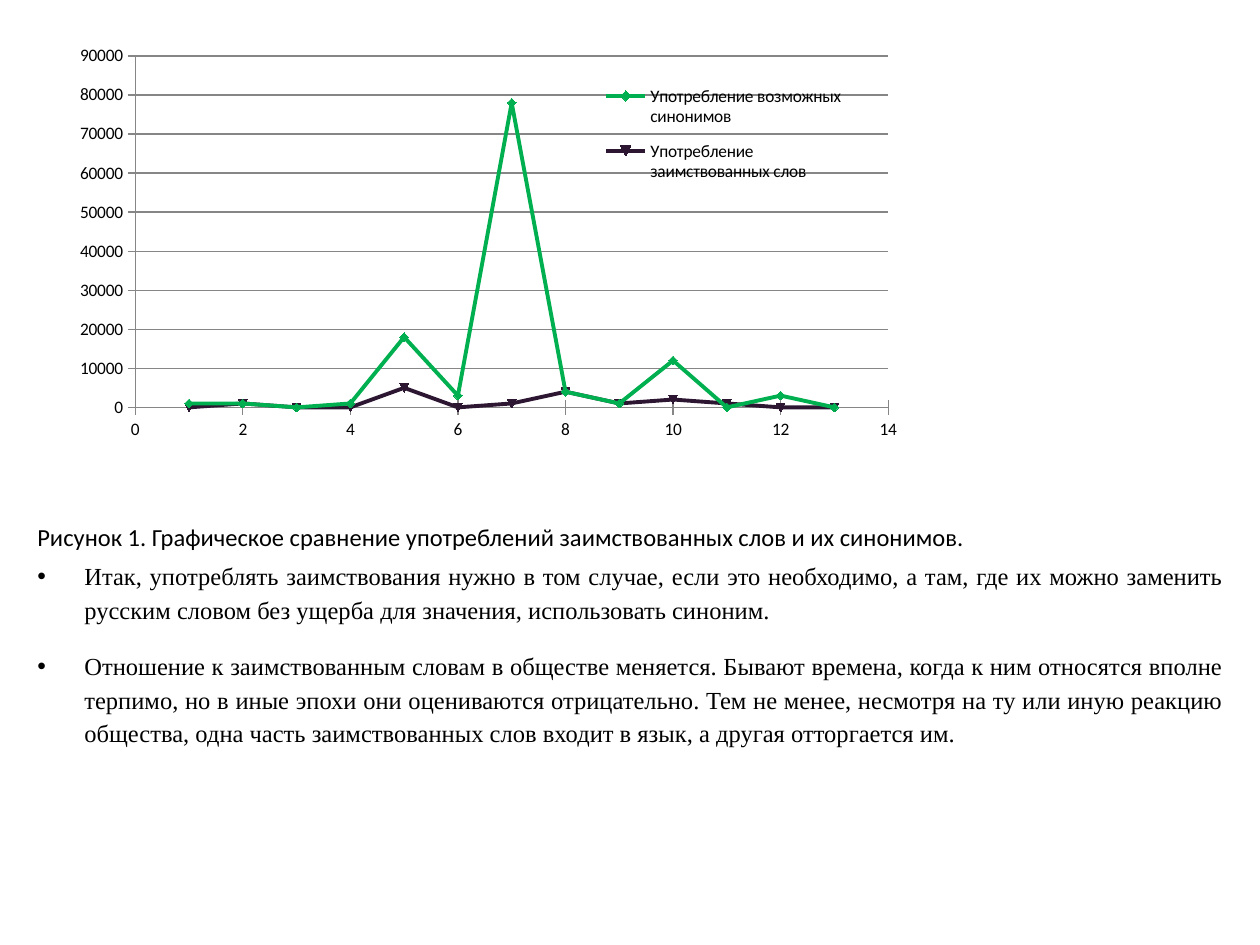
from lxml import etree
from pptx import Presentation
from pptx import util as u
from pptx.chart.data import XyChartData
from pptx.dml.color import RGBColor
from pptx.enum import chart as charts, text
from pptx.oxml import ns

PX = 914400 / 126
BLACK = RGBColor(0, 0, 0)
GRAY = RGBColor(0x86, 0x86, 0x86)
DARK = RGBColor(0x2D, 0x16, 0x32)
GREEN = RGBColor(0, 0xB0, 0x50)
AMBER = RGBColor(0xFF, 0xC0, 0)
RED = RGBColor(0xFF, 0, 0)

SERIES = [
    ("Употребление заимствованных слов", DARK, AMBER, 2,
     [0, 1000, 0, 0, 5000, 0, 1000, 4000, 1000, 2000, 1000, 0, 0]),
    ("Употребление возможных синонимов", GREEN, RED, 1,
     [1000, 1000, 0, 1000, 18000, 3000, 78000, 4000, 1000, 12000, 0, 3000, 0]),
]
CAPTION = "Рисунок 1. Графическое сравнение употреблений заимствованных слов и их синонимов."
CONCLUSIONS = [
    "Итак, употреблять заимствования нужно в том случае, если это необходимо, а там, где их можно "
    "заменить русским словом без ущерба для значения, использовать синоним.",
    "Отношение к заимствованным словам в обществе меняется. Бывают времена, когда к ним относятся "
    "вполне терпимо, но в иные эпохи они оцениваются отрицательно. Тем не менее, несмотря на ту или "
    "иную реакцию общества, одна часть заимствованных слов входит в язык, а другая отторгается им.",
]


def px(value):
    return u.Emu(round(value * PX))


def set_all(target, values):
    for name, value in values.items():
        setattr(target, name, value)


def set_layout(parent, index, values):
    for old in parent.findall(ns.qn("c:layout")):
        parent.remove(old)
    layout = etree.Element(ns.qn("c:layout"))
    manual = etree.SubElement(layout, ns.qn("c:manualLayout"))
    for name, value in values.items():
        etree.SubElement(manual, ns.qn("c:" + name)).set("val", str(value))
    parent.insert(index, layout)


def style_axis(axis, maximum, step, grid):
    set_all(axis, dict(minimum_scale=0, maximum_scale=maximum, major_unit=step,
                       has_major_gridlines=grid, major_tick_mark=charts.XL_TICK_MARK.CROSS))
    axis.tick_labels.number_format = "General"
    axis.tick_labels.number_format_is_linked = False
    lines = [axis.format.line]
    if grid:
        lines.append(axis.major_gridlines.format.line)
    for line in lines:
        line.color.rgb = GRAY
        line.width = u.Pt(0.75)


def add_usage_chart(slide, left, top, width, height):
    data = XyChartData()
    for name, _, _, _, values in SERIES:
        points = data.add_series(name)
        for x, y in enumerate(values, 1):
            points.add_data_point(x, y)
    chart = slide.shapes.add_chart(charts.XL_CHART_TYPE.XY_SCATTER_LINES,
                                   px(left), px(top), px(width), px(height), data).chart
    set_all(chart, dict(has_title=False, has_legend=True))
    set_all(chart.font, dict(name="Calibri", size=u.Pt(10)))
    chart.font.color.rgb = BLACK
    style_axis(chart.category_axis, 14, 2, False)
    style_axis(chart.value_axis, 90000, 10000, True)
    chart.plots[0].vary_by_categories = False
    all_series = list(chart.plots[0].series)
    for series, (_, color, marker_color, index, _) in zip(all_series, SERIES):
        series.smooth = False
        series.format.line.color.rgb = color
        series.format.line.width = u.Pt(2.25)
        series.marker.size = 5
        series.marker.format.fill.solid()
        series.marker.format.fill.fore_color.rgb = marker_color
        series.marker.format.line.color.rgb = color
        series._element.find(ns.qn("c:idx")).set("val", str(index))
    borrowed, synonyms = (series._element for series in all_series)
    synonyms.addnext(borrowed)
    set_all(chart.legend, dict(position=charts.XL_LEGEND_POSITION.RIGHT, include_in_layout=False))
    set_layout(chart._chartSpace.chart.plotArea, 0,
               dict(layoutTarget="inner", xMode="edge", yMode="edge",
                    x=0.117, y=0.072, w=0.892, h=0.843))
    set_layout(chart.legend._element, 1,
               dict(xMode="edge", yMode="edge", x=0.66, y=0.11, w=0.29, h=0.3))


def add_conclusions(slide, left, top, width, height):
    frame = slide.shapes.add_textbox(px(left), px(top), px(width), px(height)).text_frame
    frame.word_wrap = True
    caption = frame.paragraphs[0]
    caption.text = CAPTION
    set_all(caption.font, dict(name="Calibri", size=u.Pt(14)))
    caption.font.color.rgb = BLACK
    for sentence in CONCLUSIONS:
        paragraph = frame.add_paragraph()
        paragraph.text = sentence
        properties = paragraph._p.get_or_add_pPr()
        properties.set("marL", str(px(47)))
        properties.set("indent", str(-px(47)))
        set_all(paragraph, dict(alignment=text.PP_ALIGN.JUSTIFY, line_spacing=1.15,
                                space_before=u.Pt(2.8), space_after=u.Pt(10)))
        etree.SubElement(properties, ns.qn("a:buFont")).set("typeface", "Arial")
        etree.SubElement(properties, ns.qn("a:buChar")).set("char", "•")
        set_all(paragraph.font, dict(name="Times New Roman", size=u.Pt(14)))
        paragraph.font.color.rgb = BLACK


def main():
    presentation = Presentation()
    set_all(presentation, dict(slide_width=px(1260), slide_height=px(945)))
    slide = presentation.slides.add_slide(presentation.slide_layouts[6])
    add_usage_chart(slide, 44, 26, 853, 417)
    add_conclusions(slide, 25, 516, 1211, 335)
    presentation.save("out.pptx")


if __name__ == "__main__":
    main()
